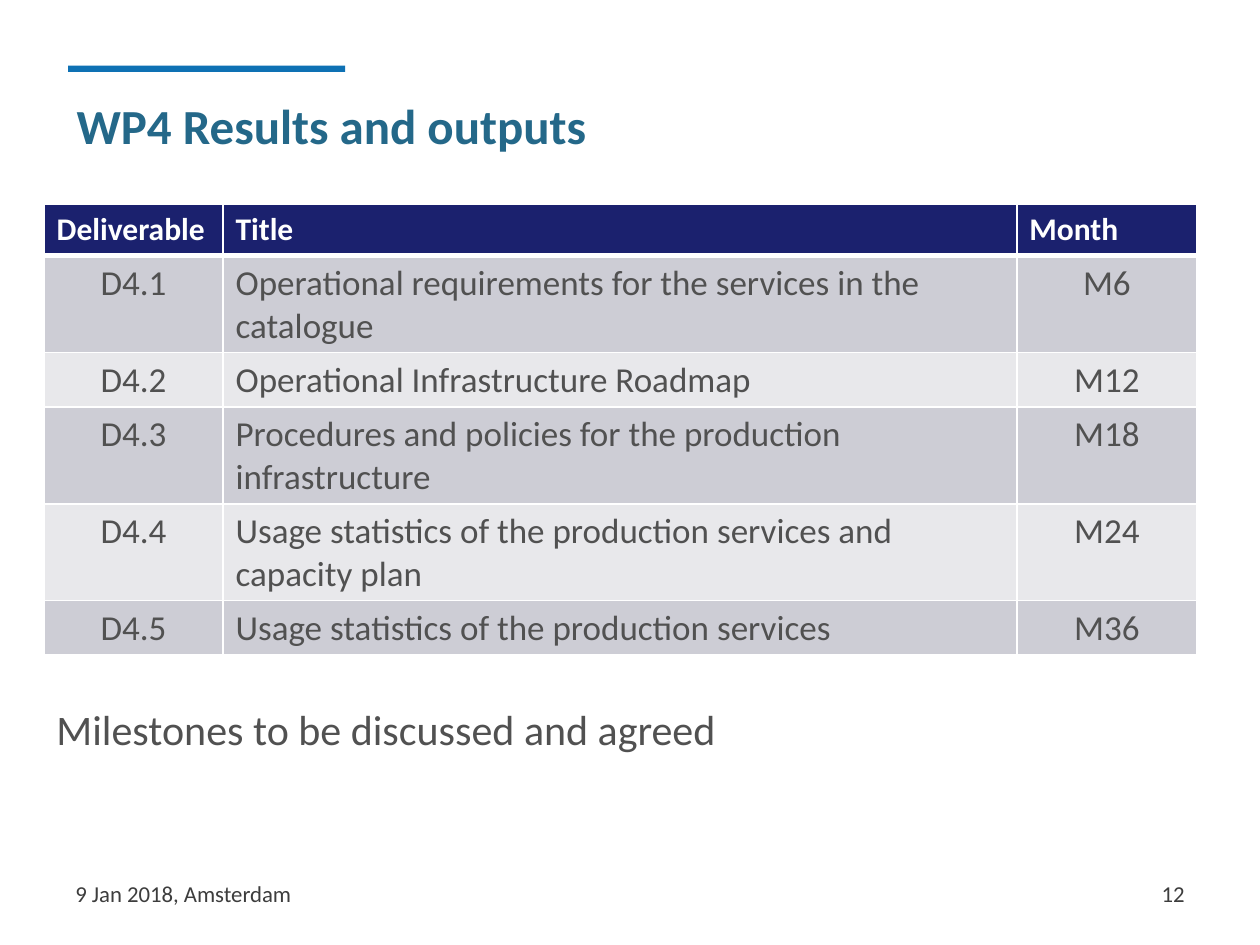
from pptx import Presentation
from pptx.dml.color import RGBColor
from pptx.enum.shapes import MSO_SHAPE as Shape
from pptx.enum.text import MSO_ANCHOR as Anchor, PP_ALIGN as Align
from pptx.oxml.ns import qn
from pptx.util import Inches, Pt
from lxml.etree import SubElement

COLORS = {
    "accent": "0E71B4", "title": "246889", "footer": "3D3D3D", "body": "515151",
    "header": "1B216E", "odd": "CDCDD5", "even": "E8E8EB", "white": "FFFFFF",
}
FORMATS = {
    "title": {"size": Pt(28), "bold": True},
    "footer": {"size": Pt(13), "bold": False},
    "body": {"size": Pt(24), "bold": False},
    "table header": {"size": Pt(18), "bold": True},
    "table body": {"size": Pt(20), "bold": False},
}

ACCENT_BAR = (0.54, 0.52, 2.2, 0.05)
# text, position, format, colour, alignment, wrap
TEXTS = [
    ("WP4 Results and outputs", (0.51, 0.68, 5.98, 0.63), "title", "title", Align.LEFT, True),
    ("9 Jan 2018, Amsterdam", (0.5, 6.89, 2.33, 0.4), "footer", "footer", Align.LEFT, True),
    ("12", (7.17, 6.89, 2.33, 0.4), "footer", "footer", Align.RIGHT, True),
    ("Milestones to be discussed and agreed", (0.35, 5.53, 5.6, 0.5), "body", "body",
     Align.LEFT, False),
]

TABLE_LEFT, TABLE_TOP, ROW_HEIGHT = 0.35, 1.62, 0.41
COLUMN_WIDTHS = [1.42, 6.3, 1.43]
COLUMN_ALIGNS = [Align.CENTER, Align.LEFT, Align.CENTER]
DELIVERABLES = [
    ("Deliverable", "Title", "Month"),
    ("D4.1", "Operational requirements for the services in the catalogue", "M6"),
    ("D4.2", "Operational Infrastructure Roadmap", "M12"),
    ("D4.3", "Procedures and policies for the production infrastructure", "M18"),
    ("D4.4", "Usage statistics of the production services and capacity plan", "M24"),
    ("D4.5", "Usage statistics of the production services", "M36"),
]


def rgb(name):
    return RGBColor.from_string(COLORS[name])


def write(text_frame, text, style, color, align):
    paragraph = text_frame.paragraphs[0]
    paragraph.alignment = align
    run = paragraph.add_run()
    run.text = text
    run.font.name = "Calibri"
    run.font.color.rgb = rgb(color)
    for attribute, value in FORMATS[style].items():
        setattr(run.font, attribute, value)


def add_text(slide, text, position, style, color, align, wrap):
    text_frame = slide.shapes.add_textbox(*map(Inches, position)).text_frame
    text_frame.word_wrap = wrap
    text_frame.vertical_anchor = Anchor.MIDDLE
    write(text_frame, text, style, color, align)


def set_borders(cell, widths):
    """Draw white borders; widths maps a side (L, R, T, B) to points."""
    properties = cell._tc.get_or_add_tcPr()
    for side, width in widths.items():
        line = SubElement(properties, qn(f"a:ln{side}"), w=str(Pt(width)))
        fill = SubElement(line, qn("a:solidFill"))
        SubElement(fill, qn("a:srgbClr"), val=COLORS["white"])


def add_deliverables(slide):
    table = slide.shapes.add_table(
        len(DELIVERABLES), len(COLUMN_WIDTHS), Inches(TABLE_LEFT), Inches(TABLE_TOP),
        Inches(sum(COLUMN_WIDTHS)), Inches(ROW_HEIGHT * len(DELIVERABLES))).table
    for column, width in zip(table.columns, COLUMN_WIDTHS):
        column.width = Inches(width)
    for row_index, values in enumerate(DELIVERABLES):
        table.rows[row_index].height = Inches(ROW_HEIGHT)
        is_header = row_index == 0
        fill = "header" if is_header else ("even", "odd")[row_index % 2]
        borders = {"L": 1, "R": 1, "T": 3 if row_index == 1 else 1, "B": 3 if is_header else 1}
        for column_index, value in enumerate(values):
            cell = table.cell(row_index, column_index)
            set_borders(cell, borders)
            cell.fill.solid()
            cell.fill.fore_color.rgb = rgb(fill)
            if is_header:
                write(cell.text_frame, value, "table header", "white", Align.LEFT)
            else:
                write(cell.text_frame, value, "table body", "body", COLUMN_ALIGNS[column_index])


def main():
    presentation = Presentation()
    presentation.slide_width, presentation.slide_height = Inches(10), Inches(7.5)
    slide = presentation.slides.add_slide(presentation.slide_layouts[6])
    bar = slide.shapes.add_shape(Shape.RECTANGLE, *map(Inches, ACCENT_BAR))
    bar.shadow.inherit = False
    bar.fill.solid()
    bar.fill.fore_color.rgb = rgb("accent")
    bar.line.fill.background()
    for text in TEXTS:
        add_text(slide, *text)
    add_deliverables(slide)
    presentation.save("out.pptx")


if __name__ == "__main__":
    main()
